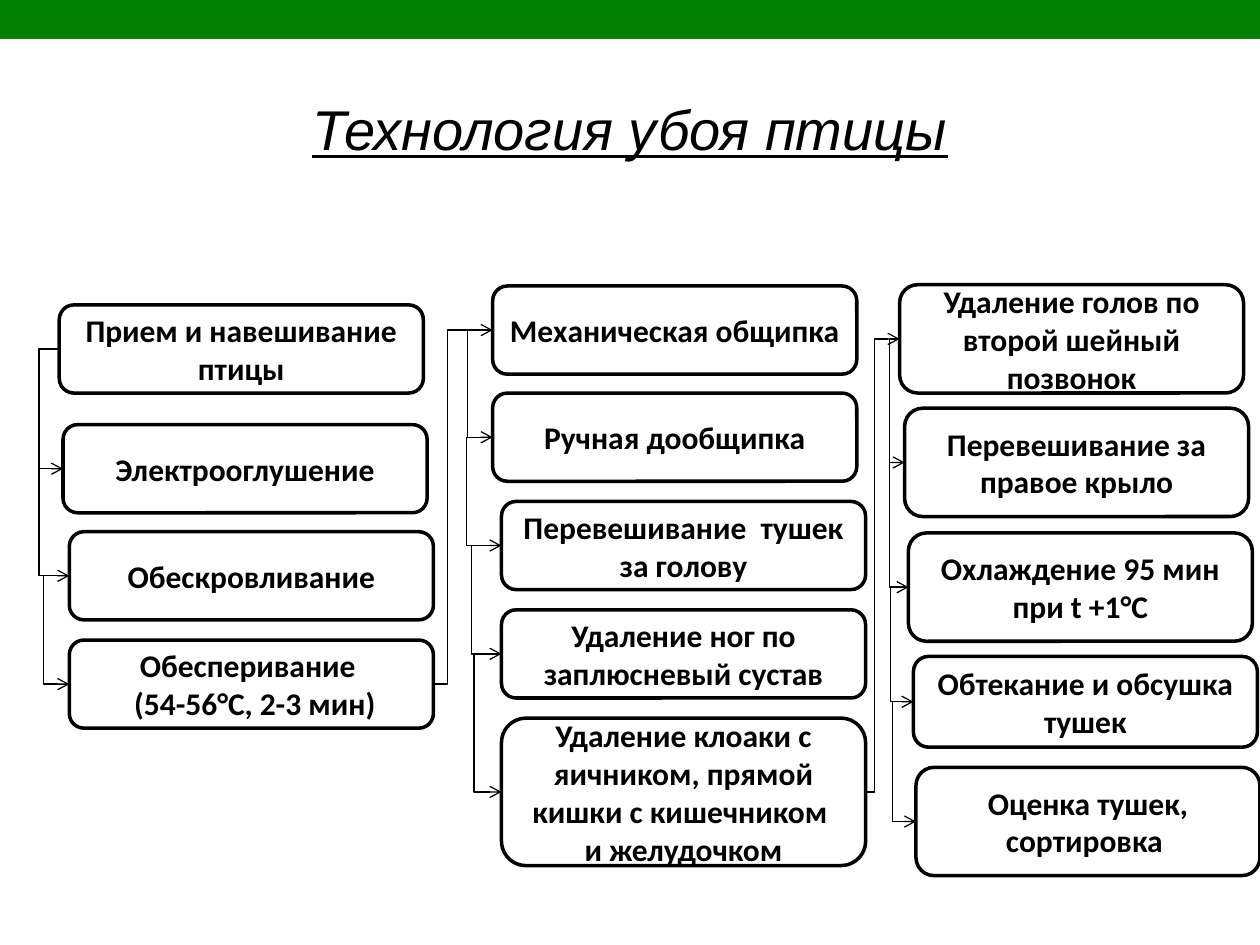
from dataclasses import dataclass
from itertools import pairwise

from lxml.etree import SubElement
from pptx import Presentation
from pptx.dml.color import RGBColor
from pptx.enum.shapes import MSO_CONNECTOR, MSO_SHAPE
from pptx.enum.text import MSO_ANCHOR, MSO_AUTO_SIZE, PP_ALIGN
from pptx.oxml.ns import qn
from pptx.util import Inches, Pt

# The slide is a grid of 1000 columns by 750 rows.
CELL = Inches(0.01)
COLUMNS, ROWS = 1000, 750
BAND_ROWS = 31
LINE_WIDTHS = {"box": Pt(2), "arrow": Pt(0.75)}
COLORS = {
    name: RGBColor.from_string(value)
    for name, value in {"ink": "000000", "paper": "FFFFFF", "band": "008000"}.items()
}
TITLE_FONT = {"name": "Arial", "size": Pt(32), "bold": False, "italic": True, "underline": True}
STEP_FONT = {"name": "Calibri", "size": Pt(18), "bold": True}


@dataclass(frozen=True)
class Step:
    text: str
    left: int
    top: int
    lane: int  # grid column of the upright part of the incoming arrow
    width: int = 289
    height: int = 70

    @property
    def middle(self) -> float:
        return self.top + self.height / 2


STAGES = [
    [
        Step("Прием и навешивание птицы", 47, 242, 0),
        Step("Электрооглушение", 50, 337, 31),
        Step("Обескровливание", 55, 422, 31),
        Step("Обесперивание \n (54-56°C, 2-3 мин)", 55, 508, 34),
    ],
    [
        Step("Механическая общипка ", 391, 227, 355),
        Step("Ручная дообщипка", 391, 312, 371),
        Step("Перевешивание  тушек за голову", 398, 398, 370),
        Step("Удаление ног по заплюсневый сустав", 398, 484, 374),
        Step("Удаление клоаки с яичником, прямой кишки с кишечником  и желудочком",
             398, 570, 376, height=117),
    ],
    [
        Step("Удаление голов по второй шейный позвонок", 714, 226, 694, 273, 86),
        Step("Перевешивание за правое крыло", 718, 324, 706, 273, 86),
        Step("Охлаждение 95 мин при t +1°C", 721, 423, 706, 273, 86),
        Step("Обтекание и обсушка тушек", 725, 521, 707, 273, 72),
        Step("Оценка тушек, сортировка ", 727, 609, 708, 273, 86),
    ],
]


def grid(*counts: float) -> list[int]:
    return [round(count * CELL) for count in counts]


def write(frame, text: str, font_format: dict) -> None:
    frame.text = text
    frame.word_wrap = True
    for para in frame.paragraphs:
        para.alignment = PP_ALIGN.CENTER
        para.font.color.rgb = COLORS["ink"]
        for name, value in font_format.items():
            setattr(para.font, name, value)


def add_title(slide, text: str) -> None:
    title = slide.shapes.title
    for name, value in zip(("left", "top", "width", "height"), grid(31, 70, 938, 648)):
        setattr(title, name, value)
    write(title.text_frame, text, TITLE_FONT)
    title.text_frame.auto_size = MSO_AUTO_SIZE.NONE
    title.text_frame.vertical_anchor = MSO_ANCHOR.TOP


def add_filled(slide, kind: MSO_SHAPE, color: str, *place: float):
    shape = slide.shapes.add_shape(kind, *grid(*place))
    shape.shadow.inherit = False
    shape.fill.solid()
    shape.fill.fore_color.rgb = COLORS[color]
    return shape


def add_step(slide, step: Step) -> None:
    box = add_filled(slide, MSO_SHAPE.ROUNDED_RECTANGLE, "paper",
                     step.left, step.top, step.width, step.height)
    box.line.color.rgb = COLORS["ink"]
    box.line.width = LINE_WIDTHS["box"]
    write(box.text_frame, step.text, STEP_FONT)
    box.text_frame.vertical_anchor = MSO_ANCHOR.MIDDLE


def add_arrow(slide, source: Step, target: Step, same_stage: bool) -> None:
    """Join left sides within a stage, or the right side to the next stage."""
    # One column inside the box keeps the arrow's width from being zero.
    start = source.left + 1 if same_stage else source.left + source.width
    arrow = slide.shapes.add_connector(
        MSO_CONNECTOR.ELBOW, *grid(start, source.middle, target.left, target.middle))
    arrow.line.color.rgb = COLORS["ink"]
    arrow.line.width = LINE_WIDTHS["arrow"]
    bend = round((target.lane - start) / (target.left - start) * 100000)
    properties = arrow._element.spPr
    guides = properties.find(qn("a:prstGeom")).get_or_add_avLst()
    SubElement(guides, qn("a:gd"), name="adj1", fmla=f"val {bend}")
    SubElement(properties.find(qn("a:ln")), qn("a:tailEnd"), type="arrow")
    SubElement(properties, qn("a:effectLst"))


def main() -> None:
    deck = Presentation()
    deck.slide_width, deck.slide_height = grid(COLUMNS, ROWS)
    slide = deck.slides.add_slide(deck.slide_layouts[5])
    add_title(slide, "Технология убоя птицы")
    for stage in STAGES:
        for step in stage:
            add_step(slide, step)
    for stage in STAGES:
        for source, target in pairwise(stage):
            add_arrow(slide, source, target, same_stage=True)
    for stage, following in pairwise(STAGES):
        add_arrow(slide, stage[-1], following[0], same_stage=False)
    band = add_filled(slide, MSO_SHAPE.RECTANGLE, "band", 0, 0, COLUMNS, BAND_ROWS)
    band.line.fill.background()
    deck.save("out.pptx")


if __name__ == "__main__":
    main()
